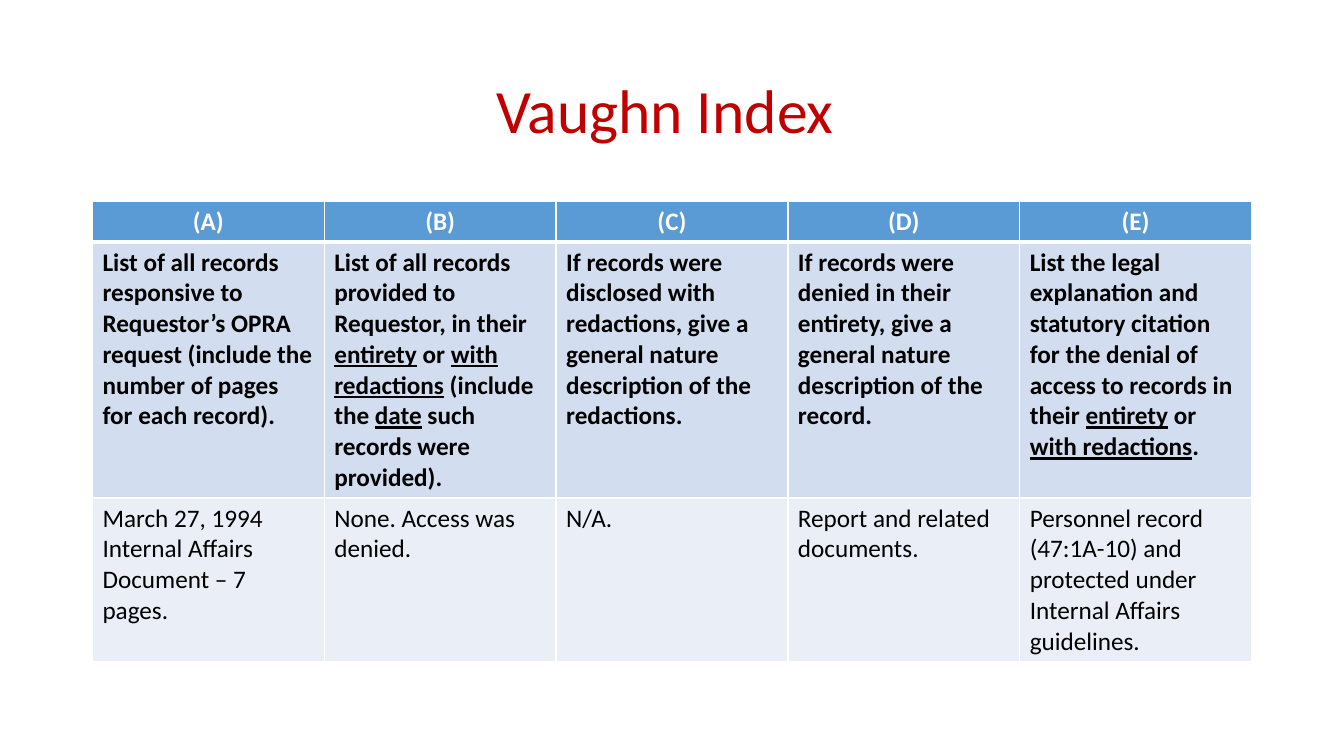
from lxml import etree
from pptx import Presentation
from pptx.dml.color import RGBColor
from pptx.enum.text import MSO_ANCHOR, PP_ALIGN
from pptx.oxml.ns import qn
from pptx.util import Cm, Pt

CENTER, LEFT = PP_ALIGN.CENTER, PP_ALIGN.LEFT
MIDDLE = MSO_ANCHOR.MIDDLE

TITLE = "Vaughn Index "
# Underscores enclose underlined words; a line break starts a new paragraph.
HEADINGS = ["(A)", "(B)", "(C)", "(D)", "(E)"]
INSTRUCTIONS = [
    "List of all records responsive to Requestor’s OPRA request "
    "(include the number of pages for each record).",
    "List of all records provided to Requestor, in their _entirety_ or "
    "_with redactions_ (include the _date_ such records were provided).",
    "If records were disclosed with redactions, give a general nature "
    "description of the redactions.",
    "If records were denied in their entirety, give a general nature "
    "description of the record.",
    "List the legal explanation and statutory citation for the denial of "
    "access to records in their _entirety_ or _with redactions_.",
]
EXAMPLE = [
    "March 27, 1994\nInternal Affairs\nDocument – 7 pages.",
    "None. Access was denied.",
    "N/A.",
    "Report and related documents.",
    "Personnel record (47:1A-10) and protected under Internal Affairs guidelines.",
]

FONT = "Calibri"
COLORS = {
    "title": "C00000",
    "heading": "5B9BD5",
    "instruction": "D2DEEF",
    "example": "EAEFF7",
    "white": "FFFFFF",
    "black": "000000",
}

# texts, height in cm, fill, text colour, bold, alignment, top and bottom border in pt
ROWS = [
    (HEADINGS, 1.03, "heading", "white", True, CENTER, 1, 3),
    (INSTRUCTIONS, 6.45, "instruction", "black", True, LEFT, 3, 1),
    (EXAMPLE, 4.13, "example", "black", False, LEFT, 1, 1),
]
MARGIN, TABLE_TOP, CONTENT_WIDTH = 2.33, 5.07, 29.21


def rgb(name):
    return RGBColor.from_string(COLORS[name])


def style(font, size, color, bold=False):
    font.name, font.size, font.bold = FONT, Pt(size), bold
    font.color.rgb = rgb(color)


def add_borders(cell, top, bottom):
    properties = cell._tc.get_or_add_tcPr()
    for side, width in (("L", 1), ("R", 1), ("T", top), ("B", bottom)):
        line = etree.SubElement(properties, qn(f"a:ln{side}"), w=str(Pt(width)))
        fill = etree.SubElement(line, qn("a:solidFill"))
        etree.SubElement(fill, qn("a:srgbClr"), val=COLORS["white"])


def write_cell(cell, text, color, bold, alignment):
    """Write one paragraph per line, underlining the words between underscores."""
    for number, line in enumerate(text.split("\n")):
        frame = cell.text_frame
        paragraph = frame.add_paragraph() if number else frame.paragraphs[0]
        paragraph.alignment = alignment
        style(paragraph.font, 18, color, bold)
        for part, words in enumerate(line.split("_")):
            run = paragraph.add_run()
            run.text = words
            style(run.font, 18, color, bold)
            if part % 2:
                run.font.underline = True


def add_title(slide):
    box = slide.shapes.add_textbox(Cm(MARGIN), Cm(1.01), Cm(CONTENT_WIDTH), Cm(3.68))
    frame = box.text_frame
    frame.word_wrap = True
    frame.vertical_anchor = MIDDLE
    paragraph = frame.paragraphs[0]
    paragraph.text = TITLE
    paragraph.alignment = CENTER
    paragraph.line_spacing = 0.9
    style(paragraph.font, 44, "title")


def add_index(slide):
    height = sum(row[1] for row in ROWS)
    table = slide.shapes.add_table(
        len(ROWS), len(HEADINGS),
        Cm(MARGIN), Cm(TABLE_TOP), Cm(CONTENT_WIDTH), Cm(height),
    ).table
    table.horz_banding = False
    for r, (texts, height, fill, color, bold, alignment, top, bottom) in enumerate(ROWS):
        table.rows[r].height = Cm(height)
        for c, text in enumerate(texts):
            cell = table.cell(r, c)
            add_borders(cell, top, bottom)
            cell.fill.solid()
            cell.fill.fore_color.rgb = rgb(fill)
            write_cell(cell, text, color, bold, alignment)


def main():
    presentation = Presentation()
    presentation.slide_width, presentation.slide_height = Cm(33.87), Cm(19.05)
    slide = presentation.slides.add_slide(presentation.slide_layouts[6])
    add_title(slide)
    add_index(slide)
    presentation.save("out.pptx")


if __name__ == "__main__":
    main()
